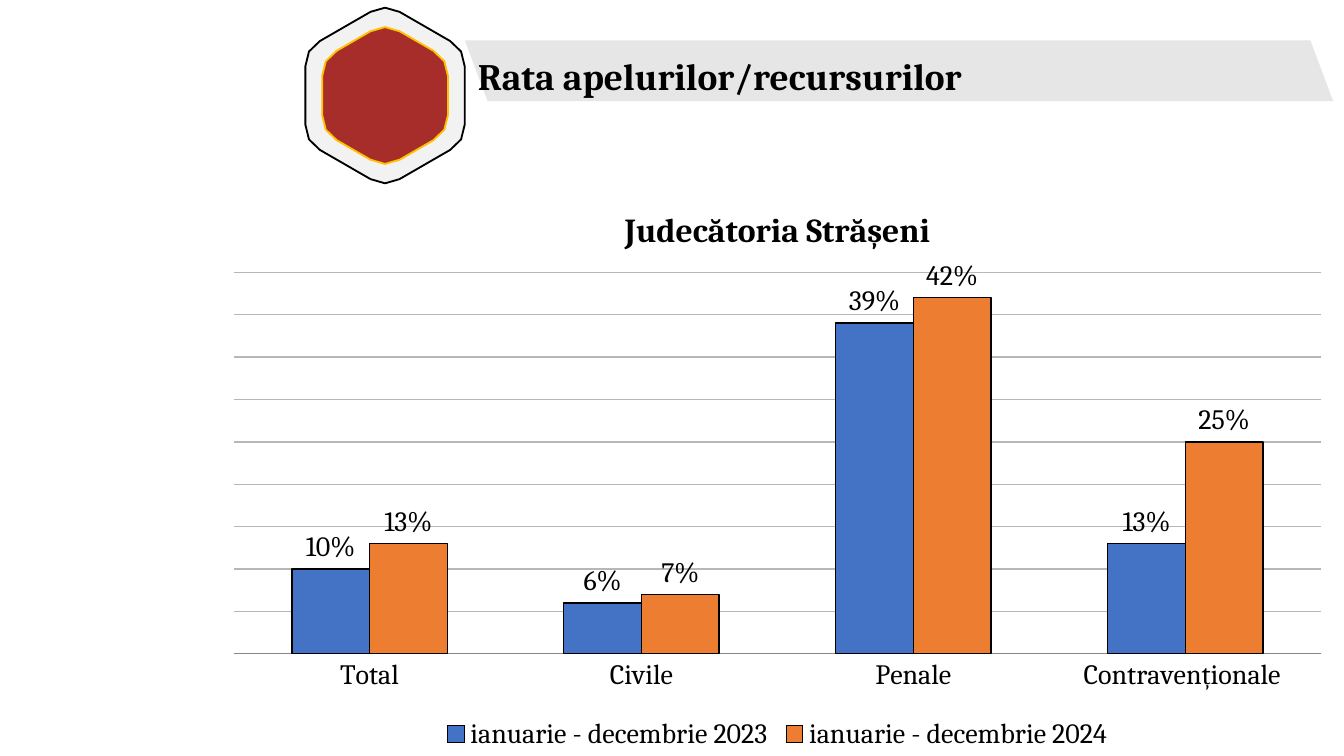
import math

from pptx import Presentation
from pptx.chart.data import CategoryChartData
from pptx.dml.color import RGBColor
from pptx.enum.chart import (XL_CHART_TYPE, XL_LABEL_POSITION,
                             XL_LEGEND_POSITION, XL_TICK_MARK)
from pptx.util import Pt

COLUMNS = XL_CHART_TYPE.COLUMN_CLUSTERED
OUTSIDE_END = XL_LABEL_POSITION.OUTSIDE_END
LEGEND_BOTTOM = XL_LEGEND_POSITION.BOTTOM
NO_TICKS = XL_TICK_MARK.NONE

BLACK = RGBColor(0x00, 0x00, 0x00)
LIGHT = RGBColor(0xF2, 0xF2, 0xF2)
RED = RGBColor(0xA7, 0x2D, 0x2A)
GOLD = RGBColor(0xFF, 0xC0, 0x00)
BANNER = RGBColor(0xE6, 0xE6, 0xE6)
GRID = RGBColor(0xB7, 0xB7, 0xB7)
AXIS = RGBColor(0x87, 0x87, 0x87)
BLUE = RGBColor(0x44, 0x72, 0xC4)
ORANGE = RGBColor(0xED, 0x7D, 0x31)

FONT = "Cambria"
PERCENT = "0%"

CATEGORIES = ["Total", "Civile", "Penale", "Contravenționale "]
SERIES = [
    ("ianuarie - decembrie 2023", [0.10, 0.06, 0.39, 0.13], BLUE),
    ("ianuarie - decembrie 2024", [0.13, 0.07, 0.42, 0.25], ORANGE),
]


def set_font(font, size, bold=False):
    font.name = FONT
    font.size = Pt(size)
    font.bold = bold
    font.color.rgb = BLACK


def add_polygon(slide, points, fill, line=None):
    """Closed outline through points given in points (pt)."""
    start, *rest = [(Pt(x), Pt(y)) for x, y in points]
    builder = slide.shapes.build_freeform(*start)
    builder.add_line_segments(rest, close=True)
    sp = builder.convert_to_shape()
    sp.shadow.inherit = False
    sp.fill.solid()
    sp.fill.fore_color.rgb = fill
    if line is None:
        sp.line.fill.background()
    else:
        sp.line.color.rgb = line
        sp.line.width = Pt(1)


def rounded_hexagon(cx, cy, radius, cut, steps=2):
    """Points of a regular hexagon whose corners follow quadratic curves."""
    corners = [(cx + radius * math.sin(math.radians(a)),
                cy - radius * math.cos(math.radians(a)))
               for a in range(0, 360, 60)]
    share = cut / radius
    points = []
    for i, corner in enumerate(corners):
        before, after = corners[i - 1], corners[(i + 1) % 6]
        start = [c + (b - c) * share for c, b in zip(corner, before)]
        end = [c + (a - c) * share for c, a in zip(corner, after)]
        for k in range(steps + 1):
            t = k / steps
            points.append([(1 - t) ** 2 * s + 2 * t * (1 - t) * c + t ** 2 * e
                           for s, c, e in zip(start, corner, end)])
    return points


def add_heading(slide, text, left, top, width, height):
    tf = slide.shapes.add_textbox(Pt(left), Pt(top), Pt(width),
                                  Pt(height)).text_frame
    tf.word_wrap = True
    p = tf.paragraphs[0]
    p.text = text
    p.line_spacing = 1.15
    p.space_after = Pt(10)
    set_font(p.font, 20, bold=True)


def add_column_chart(slide, title, left, top, width, height):
    data = CategoryChartData(number_format=PERCENT)
    data.categories = CATEGORIES
    for name, values, _ in SERIES:
        data.add_series(name, values)
    chart = slide.shapes.add_chart(COLUMNS, Pt(left), Pt(top), Pt(width),
                                   Pt(height), data).chart
    set_font(chart.font, 15)

    # Title and legend
    chart.has_title = True
    p = chart.chart_title.text_frame.paragraphs[0]
    p.text = title
    set_font(p.font, 18, bold=True)
    chart.chart_title.include_in_layout = False
    chart.has_legend = True
    chart.legend.position = LEGEND_BOTTOM
    chart.legend.include_in_layout = False

    # Axes
    cat_axis, val_axis = chart.category_axis, chart.value_axis
    cat_axis.major_tick_mark = NO_TICKS
    cat_axis.format.line.color.rgb = AXIS
    val_axis.visible = False
    val_axis.minimum_scale = 0
    val_axis.maximum_scale = 0.45
    val_axis.major_unit = 0.05
    grid = val_axis.major_gridlines.format.line
    grid.color.rgb = GRID
    grid.width = Pt(0.75)

    # Columns and their labels
    plot = chart.plots[0]
    plot.gap_width = 150
    plot.overlap = 0
    plot.vary_by_categories = False
    for series, (_, _, color) in zip(plot.series, SERIES):
        series.format.fill.solid()
        series.format.fill.fore_color.rgb = color
        series.format.line.color.rgb = BLACK
        series.format.line.width = Pt(0.75)
        labels = series.data_labels
        labels.show_value = True
        labels.number_format = PERCENT
        labels.number_format_is_linked = False
        labels.position = OUTSIDE_END


def main():
    prs = Presentation()
    prs.slide_width, prs.slide_height = Pt(720), Pt(405)
    slide = prs.slides.add_slide(prs.slide_layouts[6])

    # Hexagon emblem
    add_polygon(slide, rounded_hexagon(206.3, 51.2, 49.3, 9), LIGHT, BLACK)
    add_polygon(slide, rounded_hexagon(206.3, 51.2, 38.9, 9), RED, GOLD)

    # Heading on its slanted banner
    add_polygon(slide, [(249, 21.6), (702, 21.6), (714.2, 54.2),
                        (261.2, 54.2)], BANNER)
    add_heading(slide, "Rata apelurilor/recursurilor", 249, 21.6, 471, 33)

    # Appeal rates by type of case
    add_column_chart(slide, "Judecătoria Strășeni", 113, 98, 607, 307)

    prs.save("out.pptx")


if __name__ == "__main__":
    main()
